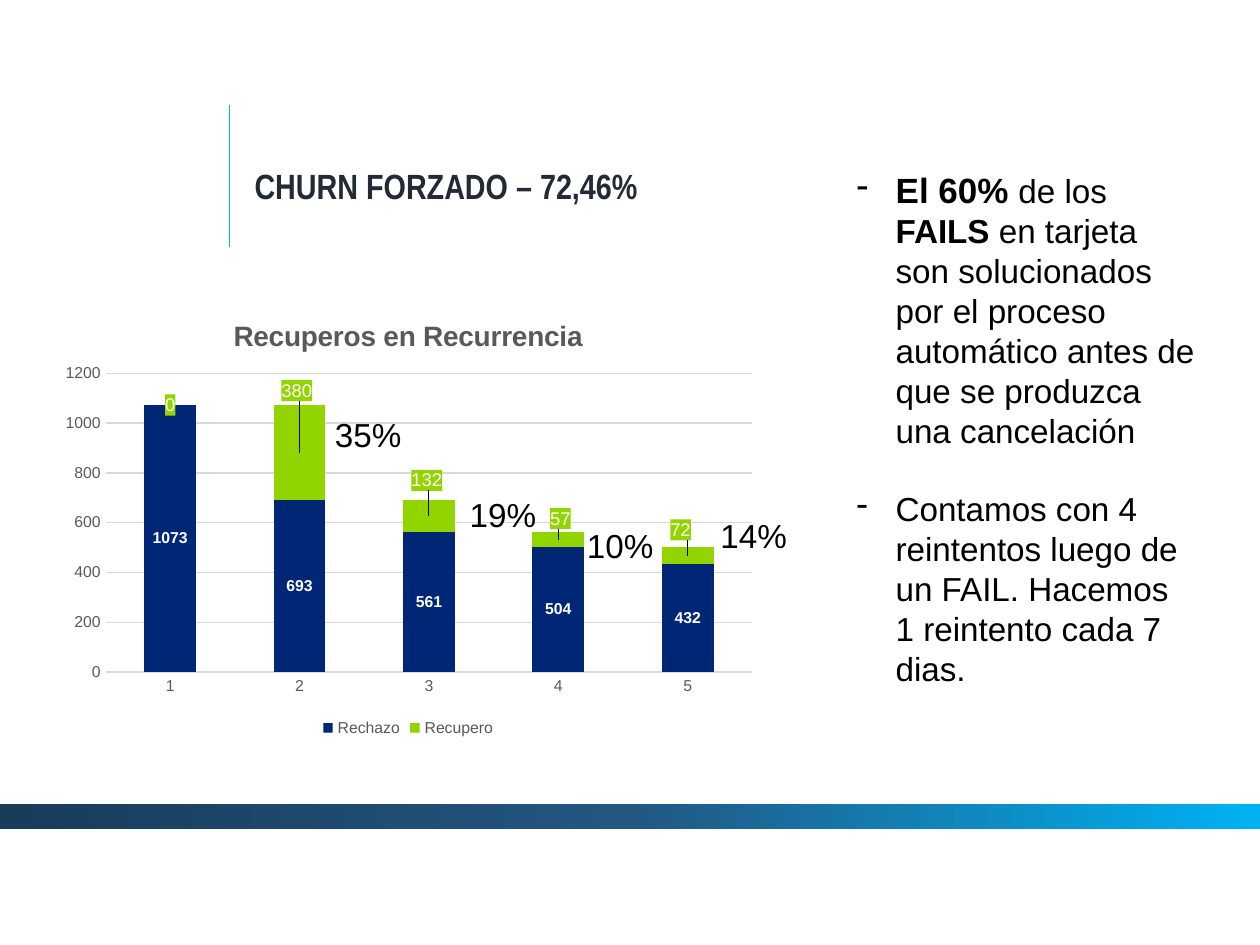
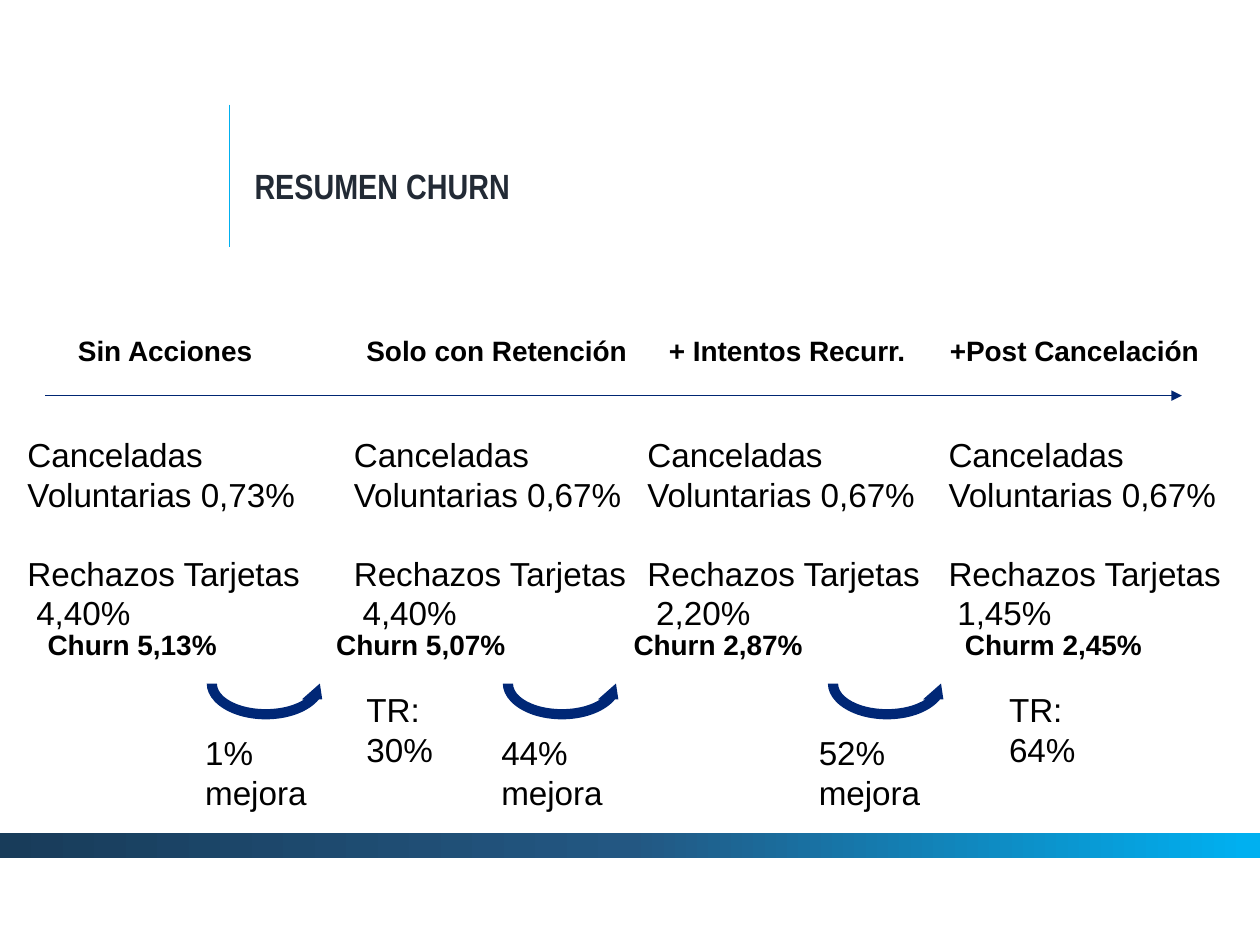
from copy import deepcopy
from dataclasses import dataclass

from pptx import Presentation
from pptx.chart.data import CategoryChartData
from pptx.dml.color import RGBColor
from pptx.enum.chart import XL_CHART_TYPE, XL_LEGEND_POSITION, XL_TICK_MARK
from pptx.enum.shapes import MSO_CONNECTOR, MSO_SHAPE
from pptx.enum.text import MSO_ANCHOR, MSO_AUTO_SIZE, PP_ALIGN
from pptx.oxml import parse_xml
from pptx.oxml.ns import nsdecls, qn
from pptx.util import Inches, Pt


@dataclass(frozen=True)
class Theme:
    """Colours, fonts and type sizes shared by the slides."""
    font: str = "Arial"
    title_font: str = "Arial Narrow"
    text: str = "000000"
    title: str = "222A35"
    accent: str = "00B0F0"
    navy: str = "002776"
    timeline: str = "002673"
    green: str = "92D400"
    white: str = "FFFFFF"
    chart_text: str = "595959"
    grid: str = "D9D9D9"
    band: tuple = ((0, "183C5A"), (50, "235782"), (99, "00B0F0"), (100, "00B0F0"))
    large: float = 20
    body: float = 19
    heading: float = 16
    recovered: float = 10.5
    small: float = 9
    hairline: float = 0.75
    blank_line: float = 22


THEME = Theme()
WIDTH, HEIGHT = 10, 7.5

FORCED_CHURN = {
    "title": "CHURN FORZADO – 72,46%",
    "band_top": 6.38,
    "chart_title": "Recuperos en Recurrencia",
    "attempts": ["1", "2", "3", "4", "5"],
    "series": [
        ("Rechazo", [1073, 693, 561, 504, 432], THEME.navy, THEME.small, True),
        ("Recupero", [0, 380, 132, 57, 72], THEME.green, THEME.recovered, False),
    ],
    "label_shifts": {1: (-0.004, -0.139), 2: (-0.003, -0.08),
                     3: (0.003, -0.047), 4: (-0.01, -0.058)},
    "rates": [("35%", 2.56, 3.24), ("19%", 3.63, 3.87),
              ("10%", 4.56, 4.12), ("14%", 5.62, 4.04)],
    "findings": [
        [("El 60% ", True, THEME.large), ("de los ", False, THEME.body),
         ("FAILS", True, THEME.body),
         (" en tarjeta son solucionados por el proceso automático antes de que "
          "se produzca una cancelación", False, THEME.body)],
        [("Contamos con 4 reintentos luego de un FAIL. Hacemos 1 reintento cada "
          "7 dias.", False, THEME.body)],
    ],
}

SUMMARY = {
    "title": "RESUMEN CHURN",
    "band_top": 6.61,
    "rows": {"heading": 2.6, "timeline": 3.14, "rates": 3.4, "churn": 4.93,
             "arrow": 5.1, "recovery": 5.42, "gain": 5.76},
    "headings": [("Sin Acciones", 0.52, 1.61), ("Solo con Retención", 2.81, 2.3),
                 ("+ Intentos Recurr.", 5.21, 2.12), ("+Post Cancelación", 7.44, 2.2)],
    "rates": [("0,73%", "4,40%", 0.12), ("0,67%", "4,40%", 2.71),
              ("0,67%", "2,20%", 5.04), ("0,67%", "1,45%", 7.43)],
    "churn": [("Churn 5,13%", 0.28, 1.56), ("Churn 5,07%", 2.57, 1.56),
              ("Churn 2,87%", 4.93, 1.56), ("Churm 2,45%", 7.56, 1.62)],
    "arrows": [1.6, 3.95, 6.53],
    "gains": [("1% mejora", 1.53), ("44% mejora", 3.88), ("52% mejora", 6.4)],
    "recoveries": [("TR: 30%", 2.81), ("TR: 64%", 7.91)],
}


def color(code):
    """Turn a hex code into a colour."""
    return RGBColor.from_string(code)


def place(*lengths):
    """Turn inches into slide units."""
    return [Inches(length) for length in lengths]


def style(font, size, code=THEME.text, bold=False, face=THEME.font):
    """Format a font."""
    font.name, font.size, font.bold = face, Pt(size), bold
    font.color.rgb = color(code)


def add_text(slide, box, lines, size=THEME.body, bold=False, wrap=True):
    """Add a text box with one paragraph per line."""
    frame = slide.shapes.add_textbox(*place(*box)).text_frame
    frame.word_wrap = wrap
    frame.text = "\n".join(lines)
    for paragraph in frame.paragraphs:
        for run in paragraph.runs:
            style(run.font, size, bold=bold)
    return frame


def add_line(slide, start, end, code):
    """Add a thin straight line without a shadow."""
    line = slide.shapes.add_connector(MSO_CONNECTOR.STRAIGHT, *place(*start, *end))
    line.line.color.rgb, line.line.width = color(code), Pt(THEME.hairline)
    line._element.spPr.append(parse_xml(f"<a:effectLst {nsdecls('a')}/>"))
    return line


def add_shape(slide, kind, box):
    """Add a shape without outline or shadow."""
    shape = slide.shapes.add_shape(kind, *place(*box))
    shape.shadow.inherit = False
    shape.line.fill.background()
    return shape


def start_slide(deck, content):
    """Add a slide with its title, rule and gradient band."""
    slide = deck.slides.add_slide(deck.slide_layouts[5])
    title = slide.shapes.title
    title.left, title.top, title.width, title.height = place(1.92, 1.29, 4.38, 0.41)
    frame = title.text_frame
    frame.text = content["title"]
    frame.word_wrap, frame.auto_size = True, MSO_AUTO_SIZE.NONE
    frame.vertical_anchor = MSO_ANCHOR.TOP
    paragraph = frame.paragraphs[0]
    paragraph.alignment, paragraph.line_spacing = PP_ALIGN.LEFT, 0.92
    style(paragraph.runs[0].font, THEME.large, THEME.title, True, THEME.title_font)
    add_line(slide, (1.82, 0.83), (1.82, 1.96), THEME.accent)
    band = add_shape(slide, MSO_SHAPE.RECTANGLE, (0, content["band_top"], WIDTH, 0.2))
    stops = "".join(f'<a:gs pos="{share * 1000}"><a:srgbClr val="{code}"/></a:gs>'
                    for share, code in THEME.band)
    band._element.spPr.insert(2, parse_xml(
        f'<a:gradFill {nsdecls("a")} rotWithShape="1"><a:gsLst>{stops}</a:gsLst>'
        '<a:lin ang="0" scaled="0"/></a:gradFill>'))
    return slide


def manual_layout(body):
    """Build a chart layout element."""
    return parse_xml(f'<c:layout {nsdecls("c")}><c:manualLayout>{body}'
                     '</c:manualLayout></c:layout>')


def shift_labels(labels, shifts):
    """Fill the labels in green and move some of them off their bars."""
    group = labels._element
    group.find(qn("c:txPr")).addprevious(parse_xml(
        f'<c:spPr {nsdecls("c", "a")}><a:solidFill><a:srgbClr val="{THEME.green}"/>'
        "</a:solidFill></c:spPr>"))
    shared = [part for part in group if part.tag != qn("c:showLeaderLines")]
    for position, (index, (x, y)) in enumerate(shifts.items()):
        label = parse_xml(f'<c:dLbl {nsdecls("c")}><c:idx val="{index}"/></c:dLbl>')
        label.append(manual_layout(f'<c:x val="{x}"/><c:y val="{y}"/>'))
        label.extend(deepcopy(part) for part in shared)
        group.insert(position, label)


def add_recovery_chart(slide, content):
    """Add the stacked columns of rejected and recovered payments."""
    data = CategoryChartData()
    data.categories = content["attempts"]
    for name, values, *_ in content["series"]:
        data.add_series(name, values)
    chart = slide.shapes.add_chart(XL_CHART_TYPE.COLUMN_STACKED,
                                   *place(0.4, 2.36, 5.68, 3.53), data).chart
    style(chart.font, THEME.small, THEME.chart_text)
    chart.has_title = True
    chart.chart_title.include_in_layout = False
    heading = chart.chart_title.text_frame
    heading.text = content["chart_title"]
    style(heading.paragraphs[0].runs[0].font, THEME.heading, THEME.chart_text, True)
    chart.has_legend = True
    chart.legend.position = XL_LEGEND_POSITION.BOTTOM
    chart.legend.include_in_layout = False
    style(chart.legend.font, THEME.small, THEME.chart_text)

    for axis in (chart.category_axis, chart.value_axis):
        axis.major_tick_mark = axis.minor_tick_mark = XL_TICK_MARK.NONE
        style(axis.tick_labels.font, THEME.small, THEME.chart_text)
    chart.value_axis.format.line.fill.background()
    chart.value_axis.maximum_scale, chart.value_axis.major_unit = 1200, 200
    chart.value_axis.minimum_scale = 0
    for line in (chart.category_axis.format.line,
                 chart.value_axis.major_gridlines.format.line):
        line.color.rgb, line.width = color(THEME.grid), Pt(THEME.hairline)

    plot = chart.plots[0]
    plot.gap_width, plot.overlap, plot.vary_by_categories = 150, 100, False
    for series, (_, _, fill, size, bold) in zip(plot.series, content["series"]):
        series.format.fill.solid()
        series.format.fill.fore_color.rgb = color(fill)
        series.data_labels.show_value = True
        style(series.data_labels.font, size, THEME.white, bold)
    shift_labels(plot.series[1].data_labels, content["label_shifts"])

    area = chart._chartSpace.chart.plotArea
    for layout in area.findall(qn("c:layout")):
        area.remove(layout)
    area.insert(0, manual_layout(
        '<c:layoutTarget val="inner"/><c:xMode val="edge"/><c:yMode val="edge"/>'
        '<c:x val="0.077"/><c:y val="0.171"/><c:w val="0.904"/><c:h val="0.672"/>'))


def add_findings(slide, findings):
    """Add the dashed list beside the chart."""
    frame = slide.shapes.add_textbox(*place(6.7, 1.29, 2.89, 4.27)).text_frame
    frame.word_wrap = True
    for index, pieces in enumerate(findings):
        paragraph = frame.add_paragraph() if index else frame.paragraphs[0]
        properties = paragraph._p.get_or_add_pPr()
        properties.set("marL", str(Inches(0.31)))
        properties.set("indent", str(-Inches(0.31)))
        properties.append(parse_xml(f'<a:buChar {nsdecls("a")} char="-"/>'))
        if index:
            paragraph.space_before = Pt(THEME.blank_line)
        for text, bold, size in pieces:
            run = paragraph.add_run()
            run.text = text
            style(run.font, size, bold=bold)


def build_forced_churn(deck):
    """Build the slide on forced churn."""
    slide = start_slide(deck, FORCED_CHURN)
    add_findings(slide, FORCED_CHURN["findings"])
    add_recovery_chart(slide, FORCED_CHURN)
    for rate, left, top in FORCED_CHURN["rates"]:
        add_text(slide, (left, top, 0.87, 0.42), [rate])


def build_summary(deck):
    """Build the slide that compares the four stages."""
    slide = start_slide(deck, SUMMARY)
    rows = SUMMARY["rows"]
    for voluntary, rejected, left in SUMMARY["rates"]:
        frame = add_text(slide, (left, rows["rates"], 2.57, 1.7),
                         [f"Canceladas Voluntarias {voluntary}",
                          "Rechazos Tarjetas", rejected])
        frame.paragraphs[1].space_before = Pt(THEME.blank_line)
        frame.paragraphs[2]._p.get_or_add_pPr().set("marL", str(Inches(0.07)))
    timeline = add_line(slide, (0.36, rows["timeline"]), (9.38, rows["timeline"]),
                        THEME.timeline)
    timeline.line._get_or_add_ln().append(
        parse_xml(f'<a:tailEnd {nsdecls("a")} type="triangle"/>'))
    for row in ("heading", "churn"):
        for text, left, width in SUMMARY["headings" if row == "heading" else row]:
            add_text(slide, (left, rows[row], width, 0.37), [text],
                     THEME.heading, True, False)
    for left in SUMMARY["arrows"]:
        arrow = add_shape(slide, MSO_SHAPE.CIRCULAR_ARROW,
                          (left, rows["arrow"], 1.02, 0.65))
        arrow.fill.solid()
        arrow.fill.fore_color.rgb = color(THEME.navy)
        arrow._element.spPr.xfrm.set("flipV", "1")
    for text, left in SUMMARY["gains"]:
        add_text(slide, (left, rows["gain"], 1.28, 0.74), [text])
    for text, left in SUMMARY["recoveries"]:
        add_text(slide, (left, rows["recovery"], 0.98, 0.74), [text])


def main():
    """Build and save both slides."""
    deck = Presentation()
    deck.slide_width, deck.slide_height = place(WIDTH, HEIGHT)
    build_forced_churn(deck)
    build_summary(deck)
    deck.save("out.pptx")


if __name__ == "__main__":
    main()
